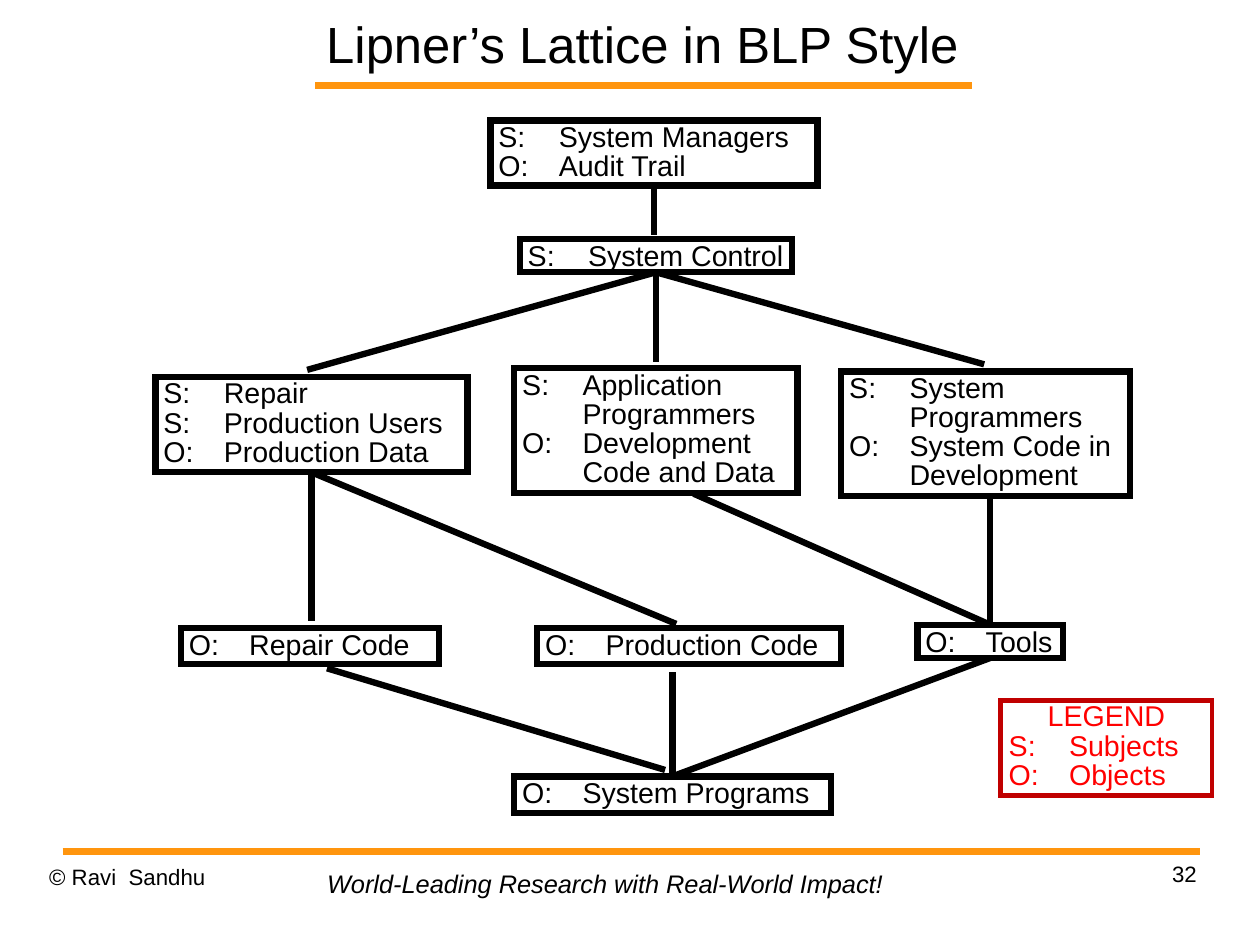
from dataclasses import dataclass

from lxml import etree
from pptx import Presentation
from pptx.dml.color import RGBColor
from pptx.enum.shapes import MSO_CONNECTOR, MSO_SHAPE
from pptx.enum.text import MSO_ANCHOR, MSO_AUTO_SIZE, PP_ALIGN
from pptx.oxml.ns import qn
from pptx.util import Pt

STRAIGHT = MSO_CONNECTOR.STRAIGHT
RECTANGLE = MSO_SHAPE.RECTANGLE
TOP, MIDDLE = MSO_ANCHOR.TOP, MSO_ANCHOR.MIDDLE
LEFT, CENTER, RIGHT = PP_ALIGN.LEFT, PP_ALIGN.CENTER, PP_ALIGN.RIGHT
FIT_SHAPE = MSO_AUTO_SIZE.SHAPE_TO_FIT_TEXT
TOP_SIDE, BOTTOM_SIDE = 0, 2


@dataclass(frozen=True)
class Theme:
    font: str = "Arial"
    ink: RGBColor = RGBColor(0, 0, 0)
    paper: RGBColor = RGBColor(255, 255, 255)
    accent: RGBColor = RGBColor(0xFF, 0x95, 0x0E)
    legend_line: RGBColor = RGBColor(0xC0, 0, 0)
    legend_text: RGBColor = RGBColor(0xFF, 0, 0)
    title_size: float = 32
    node_size: float = 18
    motto_size: float = 16
    footer_size: float = 14
    rule_width: float = 4.3
    node_width: float = 4
    legend_width: float = 3
    hanging: float = 38


@dataclass(frozen=True)
class Box:
    left: float
    top: float
    width: float
    height: float

    def inner(self, left, top, width, height):
        return Box(self.left + left, self.top + top, width, height)

    def lengths(self):
        return [Pt(value) for value in (self.left, self.top, self.width, self.height)]


THEME = Theme()

NODES = {
    "managers": ((211, 0, 206, 41), ["S:\tSystem Managers", "O:\tAudit Trail"]),
    "control": ((229.5, 74.5, 171.5, 21), ["S:\tSystem Control"]),
    "repair": ((0, 161.5, 196.5, 60),
               ["S:\tRepair", "S:\tProduction Users", "O:\tProduction Data"]),
    "application": ((226, 156, 178.5, 78.5),
                    ["S:\tApplication Programmers", "O:\tDevelopment Code and Data"]),
    "system": ((432, 158, 182, 78.5),
               ["S:\tSystem Programmers", "O:\tSystem Code in Development"]),
    "repair code": ((16, 319.5, 162.5, 23), ["O:\tRepair Code"]),
    "production code": ((240.5, 319.5, 191.5, 23), ["O:\tProduction Code"]),
    "tools": ((480, 317.5, 91.5, 21), ["O:\tTools"]),
    "programs": ((226, 413, 199.5, 23), ["O:\tSystem Programs"]),
}

LINKS = [
    ("managers", (314, 72)),
    ("control", (95.5, 157)),
    ("control", (315.25, 152)),
    ("control", (522, 153.5)),
    ("repair", (98.25, 315)),
    ("repair", (328, 317)),
    ((339, 235), "tools"),
    ((525.75, 237), "tools"),
    ((108, 345), (321, 409)),
    ((325.75, 347.5), "programs"),
    ("tools", "programs"),
]


def add_line(page, start, end, color, width):
    line = page.shapes.add_connector(STRAIGHT, *[Pt(value) for value in (*start, *end)])
    line.line.color.rgb = color
    line.line.width = Pt(width)
    etree.SubElement(line._element.spPr, qn("a:effectLst"))
    return line


def style_text(para, size, color, align=LEFT):
    para.alignment = align
    para.font.name = THEME.font
    para.font.size = Pt(size)
    para.font.color.rgb = color


def set_margins(frame, across, down):
    frame.margin_left = frame.margin_right = Pt(across)
    frame.margin_top = frame.margin_bottom = Pt(down)


def add_label(page, box, text, size, align=LEFT, anchor=TOP):
    frame = page.shapes.add_textbox(*box.lengths()).text_frame
    frame.word_wrap = True
    frame.vertical_anchor = anchor
    set_margins(frame, 0, 0)
    para = frame.paragraphs[0]
    para.text = text
    style_text(para, size, THEME.ink, align)
    return frame


def add_node(page, box, lines, line_color, line_width, text_color):
    node = page.shapes.add_shape(RECTANGLE, *box.lengths())
    node.shadow.inherit = False
    node.fill.solid()
    node.fill.fore_color.rgb = THEME.paper
    node.line.color.rgb = line_color
    node.line.width = Pt(line_width)
    outline = node._element.spPr.find(qn("a:ln"))
    etree.SubElement(outline, qn("a:miter")).set("lim", "800000")
    frame = node.text_frame
    frame.word_wrap = True
    frame.auto_size = FIT_SHAPE
    frame.vertical_anchor = TOP
    set_margins(frame, 5, 2.2)
    for index, text in enumerate(lines):
        para = frame.paragraphs[0] if index == 0 else frame.add_paragraph()
        para.text = text
        para.line_spacing = 0.85 if len(lines) > 1 else 0.88
        properties = para._p.get_or_add_pPr()
        properties.set("marL", str(Pt(THEME.hanging)))
        properties.set("indent", str(-Pt(THEME.hanging)))
        style_text(para, THEME.node_size, text_color, LEFT if "\t" in text else CENTER)
    return node


def add_header(page, box):
    bottom = box.top + box.height
    add_line(page, (box.left + 25, bottom), (box.left + box.width - 24, bottom),
             THEME.accent, THEME.rule_width)
    add_label(page, box, "Lipner’s Lattice in BLP Style", THEME.title_size, CENTER, MIDDLE)


def add_footer(page, box):
    add_line(page, (box.left + 8.5, box.top), (box.left + box.width, box.top),
             THEME.accent, THEME.rule_width)
    add_label(page, box.inner(0, 7, 185, 41), "© Ravi  Sandhu", THEME.footer_size)
    motto = add_label(page, box.inner(168, 7, 366, 27),
                      "World-Leading Research with Real-World Impact!", THEME.motto_size)
    motto.word_wrap = False
    motto.auto_size = FIT_SHAPE
    set_margins(motto, 7.2, 3.6)
    motto.paragraphs[0].font.italic = True
    add_label(page, box.inner(538, 5.5, 185, 41), "32", THEME.footer_size, RIGHT)


def add_lattice(page, box):
    nodes = {
        name: add_node(page, box.inner(*place), lines, THEME.ink, THEME.node_width, THEME.ink)
        for name, (place, lines) in NODES.items()
    }
    for upper, lower in LINKS:
        start, end = [
            (box.left, box.top) if spot in nodes else (box.left + spot[0], box.top + spot[1])
            for spot in (upper, lower)
        ]
        link = add_line(page, start, end, THEME.ink, THEME.node_width)
        if upper in nodes:
            link.begin_connect(nodes[upper], BOTTOM_SIDE)
        if lower in nodes:
            link.end_connect(nodes[lower], TOP_SIDE)


def add_legend(page, box):
    add_node(page, box, ["LEGEND", "S:\tSubjects", "O:\tObjects"],
             THEME.legend_line, THEME.legend_width, THEME.legend_text)


def main():
    deck = Presentation()
    deck.slide_width, deck.slide_height = Pt(793.75), Pt(595.25)
    page = deck.slides.add_slide(deck.slide_layouts[6])
    add_header(page, Box(173.5, 0, 463, 54))
    add_footer(page, Box(31, 536.5, 725, 48))
    add_lattice(page, Box(98, 76, 614, 436))
    add_legend(page, Box(630.5, 441, 133, 60))
    deck.save("out.pptx")


if __name__ == "__main__":
    main()
